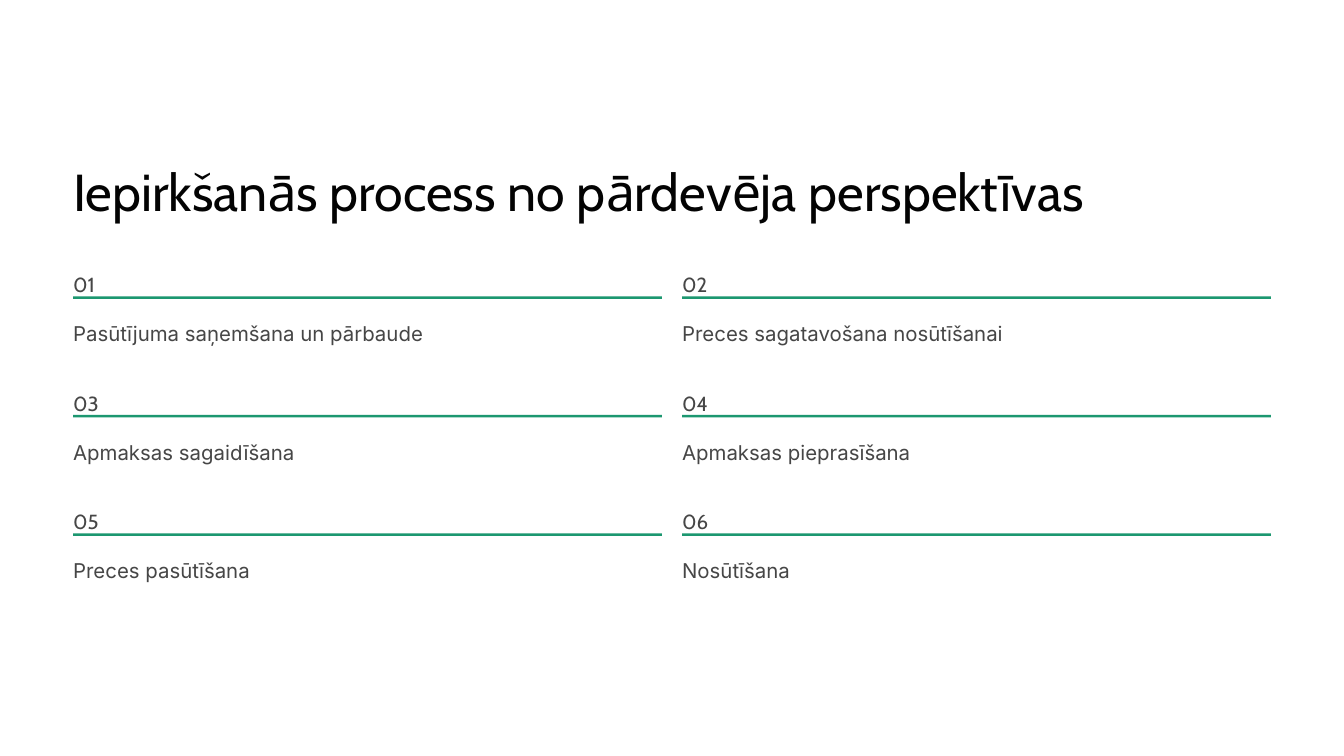
from dataclasses import dataclass

from pptx import Presentation
from pptx.dml.color import RGBColor
from pptx.enum import shapes, text
from pptx.util import Pt

# Content
TITLE = "Iepirkšanās process no pārdevēja perspektīvas"
STEPS = [
    "Pasūtījuma saņemšana un pārbaude",
    "Preces sagatavošana nosūtīšanai",
    "Apmaksas sagaidīšana",
    "Apmaksas pieprasīšana",
    "Preces pasūtīšana",
    "Nosūtīšana",
]


@dataclass(frozen=True)
class Theme:
    background: str = "FFFFFF"
    title: str = "030303"
    body: str = "464646"
    rule: str = "1C9770"
    heading_font: str = "Cabin"
    body_font: str = "Inter"
    title_size: float = 44.5
    body_size: float = 17.5
    title_leading: float = 55.5
    body_leading: float = 28.5


THEME = Theme()

# Grid, in points
LEFT, COLUMN_WIDTH, COLUMN_PITCH = 62.64, 504.72, 522
FIRST_ROW, ROW_PITCH, COLUMNS = 226.08, 101.52, 2
RULE_OFFSET, RULE_HEIGHT, LABEL_OFFSET = 28.08, 2.16, 41.76


def points(*lengths):
    return [Pt(length) for length in lengths]


def write(box, words, font, size, colour, leading):
    frame = box.text_frame
    frame.margin_left = frame.margin_top = frame.margin_right = frame.margin_bottom = 0
    frame.word_wrap = False
    frame.auto_size = text.MSO_AUTO_SIZE.NONE
    frame.vertical_anchor = text.MSO_ANCHOR.TOP
    frame.text = words
    paragraph = frame.paragraphs[0]
    paragraph.alignment = text.PP_ALIGN.LEFT
    paragraph.line_spacing = Pt(leading)
    paragraph.font.name = font
    paragraph.font.size = Pt(size)
    paragraph.font.color.rgb = RGBColor.from_string(colour)


def add_step(slide, index, label):
    row, column = divmod(index, COLUMNS)
    left = LEFT + column * COLUMN_PITCH
    top = FIRST_ROW + row * ROW_PITCH
    body = (THEME.body_size, THEME.body, THEME.body_leading)

    # Number
    number = slide.shapes.add_textbox(*points(left, top, 18, 22.32))
    write(number, f"{index + 1:02}", THEME.heading_font, *body)

    # Green rule
    rule = slide.shapes.add_shape(
        shapes.MSO_SHAPE.RECTANGLE,
        *points(left, top + RULE_OFFSET, COLUMN_WIDTH, RULE_HEIGHT))
    rule.shadow.inherit = False
    rule.fill.solid()
    rule.fill.fore_color.rgb = RGBColor.from_string(THEME.rule)
    rule.line.fill.background()

    # Step name
    name = slide.shapes.add_textbox(
        *points(left, top + LABEL_OFFSET, COLUMN_WIDTH, 28.8))
    write(name, label, THEME.body_font, *body)


def main():
    deck = Presentation()
    deck.slide_width, deck.slide_height = points(1152, 648)
    slide = deck.slides.add_slide(deck.slide_layouts[5])
    slide.background.fill.solid()
    slide.background.fill.fore_color.rgb = RGBColor.from_string(THEME.background)

    # Title
    title = slide.shapes.title
    title.left, title.top, title.width, title.height = points(LEFT, 134.64, 1008, 56.16)
    write(title, TITLE, THEME.heading_font, THEME.title_size, THEME.title,
          THEME.title_leading)

    # Steps, two to a row
    for index, label in enumerate(STEPS):
        add_step(slide, index, label)

    deck.save("out.pptx")


if __name__ == "__main__":
    main()
